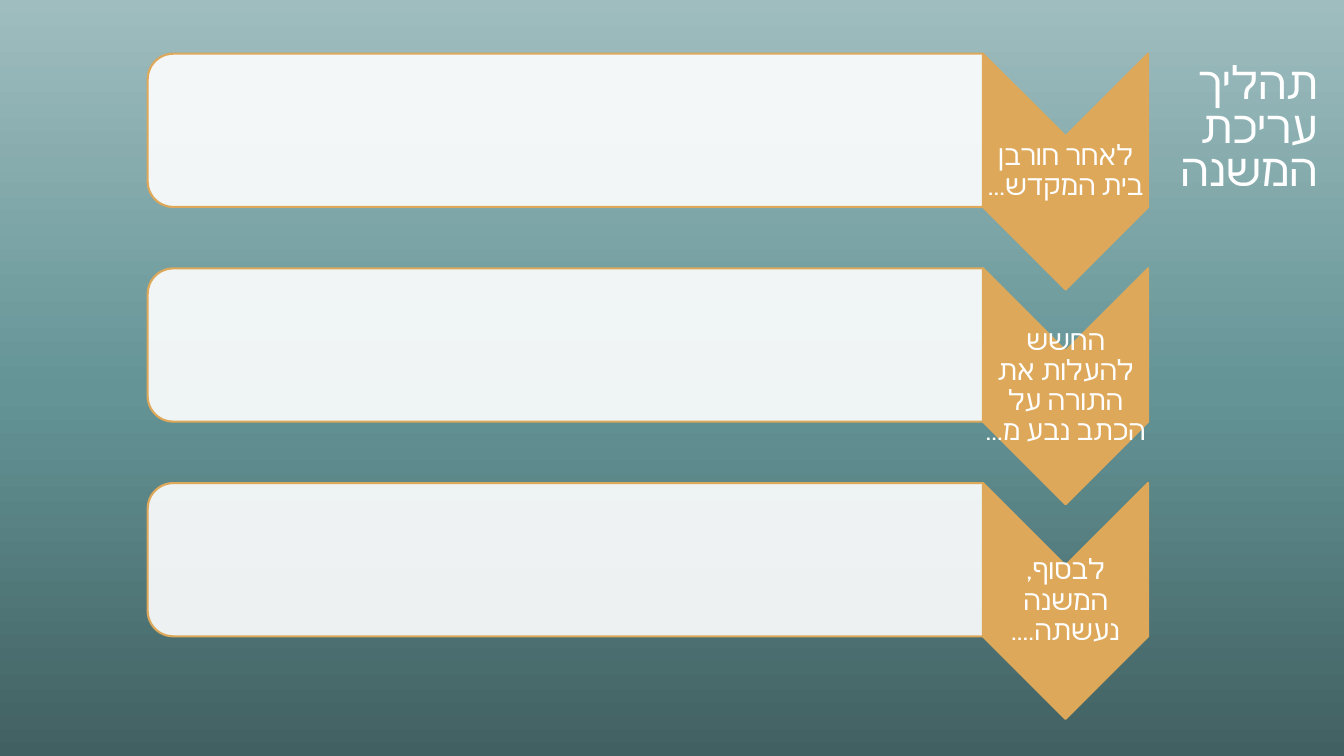
from copy import deepcopy
from dataclasses import dataclass

from lxml import etree
from pptx import Presentation
from pptx.dml.color import RGBColor
from pptx.enum.shapes import MSO_SHAPE
from pptx.enum.text import MSO_ANCHOR, MSO_AUTO_SIZE, PP_ALIGN
from pptx.oxml.ns import qn
from pptx.util import Inches, Pt

CHEVRON = MSO_SHAPE.CHEVRON
ROUNDED_PANEL = MSO_SHAPE.ROUND_2_SAME_RECTANGLE
MIDDLE, BOTTOM = MSO_ANCHOR.MIDDLE, MSO_ANCHOR.BOTTOM
CENTER, RIGHT = PP_ALIGN.CENTER, PP_ALIGN.RIGHT
NO_AUTOFIT = MSO_AUTO_SIZE.NONE

SLIDE_WIDTH, SLIDE_HEIGHT = Inches(13.333), Inches(7.5)


@dataclass(frozen=True)
class Theme:
    gold: str = "DDA859"
    white: str = "FFFFFF"
    gradient: tuple = ((0, "416061"), (0.48, "649496"), (1, "9FBDBF"))
    title_font: str = "Cabin"
    label_font: str = "Cambria"
    hebrew_font: str = "Cabin"
    title_size: float = 32.4
    label_size: float = 20
    outline: float = 1.5
    panel_opacity: int = 90


THEME = Theme()

# Layout in percent of the slide's width and height
TITLE_FRAME = (78.98, 9.07, 20.03, 17.73)
FIRST_ROW, ROW_PITCH = 7.1, 28.4
PANEL_LEFT, PANEL_WIDTH, PANEL_HEIGHT = 10.99, 62.15, 20.27
CHEVRON_LEFT, CHEVRON_WIDTH, CHEVRON_HEIGHT = 73.13, 12.3, 31.2
LABEL_OFFSET, LABEL_HEIGHT = 10.93, 9.33

TITLE = "תהליך עריכת המשנה"
STEPS = (
    "לאחר חורבן בית המקדש...",
    "החשש להעלות את התורה על הכתב נבע מ...",
    "לבסוף, המשנה נעשתה....",
)


def color(code):
    return RGBColor.from_string(code)


def to_lengths(frame):
    left, top, width, height = frame
    return (int(SLIDE_WIDTH * left / 100), int(SLIDE_HEIGHT * top / 100),
            int(SLIDE_WIDTH * width / 100), int(SLIDE_HEIGHT * height / 100))


def paint_background(slide):
    fill = slide.background.fill
    fill.gradient()
    fill.gradient_angle = 90
    stop_list = slide.element.find(".//" + qn("a:gsLst"))
    stop_list.append(deepcopy(stop_list[0]))
    for stop, (position, code) in zip(fill.gradient_stops, THEME.gradient):
        stop.position = position
        stop.color.rgb = color(code)


def write_text(frame, text, font_name, size, alignment, anchor, spacing, insets):
    """Write one right-to-left paragraph."""
    frame.word_wrap = True
    frame.auto_size = NO_AUTOFIT
    frame.vertical_anchor = anchor
    frame.margin_left = frame.margin_right = Inches(insets[0])
    frame.margin_top = frame.margin_bottom = Inches(insets[1])
    paragraph = frame.paragraphs[0]
    paragraph.alignment = alignment
    paragraph.line_spacing = spacing
    paragraph._p.get_or_add_pPr().set("rtl", "1")
    run = paragraph.add_run()
    run.text = text
    run.font.name = font_name
    run.font.size = Pt(size)
    run.font.color.rgb = color(THEME.white)
    # Hebrew letters take the complex-script font
    complex_font = etree.SubElement(run._r.get_or_add_rPr(), qn("a:cs"))
    complex_font.set("typeface", THEME.hebrew_font)


def add_title(slide):
    title = slide.shapes.title
    title.left, title.top, title.width, title.height = to_lengths(TITLE_FRAME)
    write_text(title.text_frame, TITLE, THEME.title_font, THEME.title_size,
               RIGHT, BOTTOM, 0.8, (0.13, 0.07))


def add_turned_shape(shapes, kind, frame, rotation, fill_code):
    """Add a shape on its side so that it covers the given frame."""
    left, top, width, height = to_lengths(frame)
    shift = (width - height) // 2
    shape = shapes.add_shape(kind, left + shift, top - shift, height, width)
    shape.rotation = rotation
    shape.shadow.inherit = False
    shape.fill.solid()
    shape.fill.fore_color.rgb = color(fill_code)
    shape.line.color.rgb = color(THEME.gold)
    shape.line.width = Pt(THEME.outline)
    return shape


def set_opacity(shape, percent):
    fill_color = shape._element.spPr.find(qn("a:solidFill"))[0]
    etree.SubElement(fill_color, qn("a:alpha")).set("val", str(percent * 1000))


def add_step(shapes, top, text):
    # Downward chevron
    add_turned_shape(shapes, CHEVRON,
                     (CHEVRON_LEFT, top, CHEVRON_WIDTH, CHEVRON_HEIGHT),
                     90, THEME.gold)
    # Label over the chevron
    label = shapes.add_textbox(*to_lengths(
        (CHEVRON_LEFT, top + LABEL_OFFSET, CHEVRON_WIDTH, LABEL_HEIGHT)))
    write_text(label.text_frame, text, THEME.label_font, THEME.label_size,
               CENTER, MIDDLE, 0.9, (0.01, 0.01))
    # Empty panel, rounded on the left
    panel = add_turned_shape(shapes, ROUNDED_PANEL,
                             (PANEL_LEFT, top, PANEL_WIDTH, PANEL_HEIGHT),
                             270, THEME.white)
    set_opacity(panel, THEME.panel_opacity)


def main():
    presentation = Presentation()
    presentation.slide_width = SLIDE_WIDTH
    presentation.slide_height = SLIDE_HEIGHT
    slide = presentation.slides.add_slide(
        presentation.slide_layouts.get_by_name("Title Only"))
    paint_background(slide)
    add_title(slide)
    process = slide.shapes.add_group_shape()
    for row, text in enumerate(STEPS):
        add_step(process.shapes, FIRST_ROW + row * ROW_PITCH, text)
    presentation.save("out.pptx")


if __name__ == "__main__":
    main()
